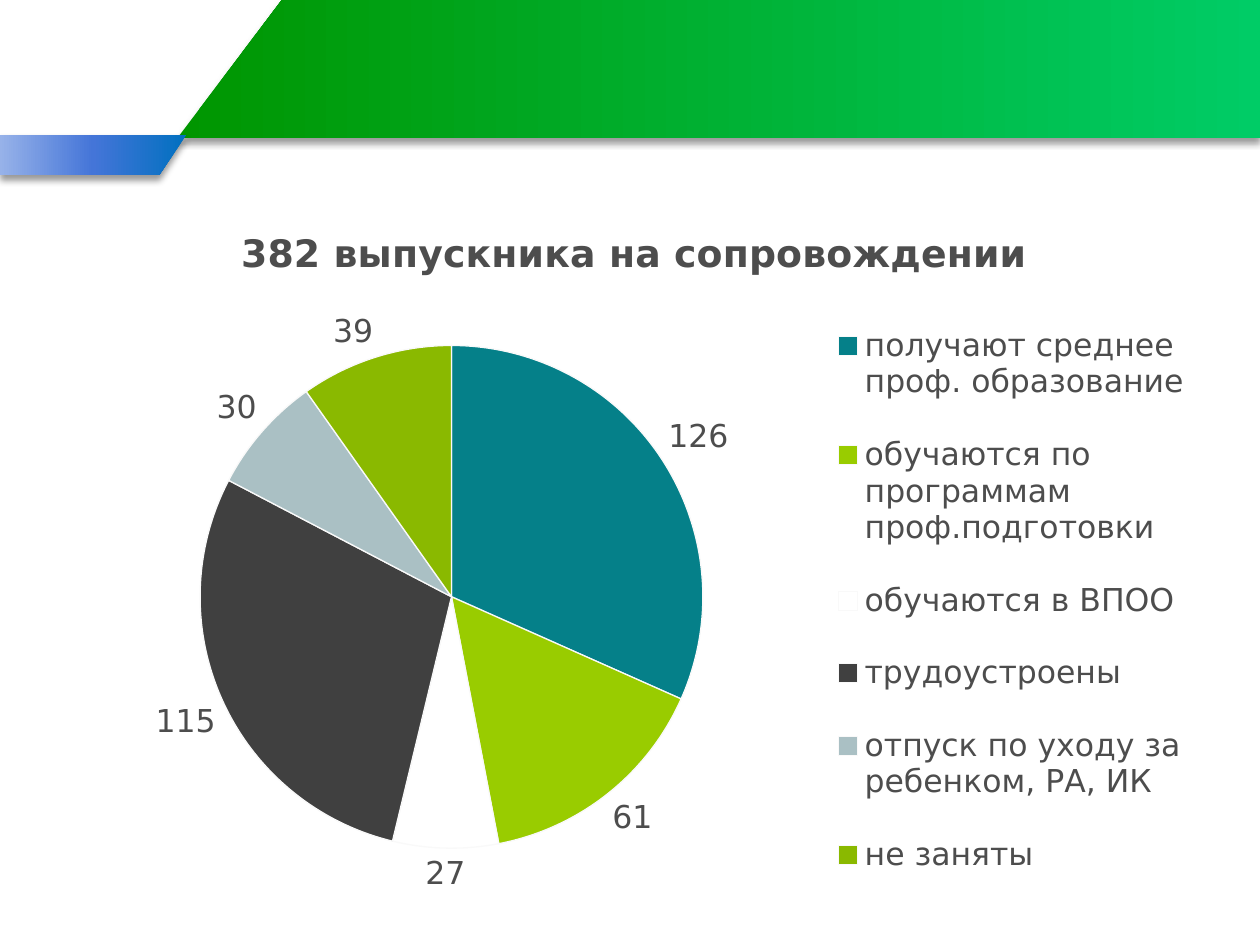
import pptx
import pptx.chart.data
import pptx.dml.color
import pptx.enum.chart
import pptx.oxml
import pptx.oxml.ns
import pptx.util

Pt = pptx.util.Pt
FONT = "DejaVu Sans"
TEXT_COLOR = "4D4D4D"
TITLE = "382 выпускника на сопровождении"
GRADUATES = [
    ("получают среднее проф. образование", 126, "058089"),
    ("обучаются по программам проф.подготовки", 61, "99CC00"),
    ("обучаются в ВПОО", 27, "FFFFFF"),
    ("трудоустроены", 115, "404040"),
    ("отпуск по уходу за ребенком, РА, ИК", 30, "AAC0C4"),
    ("не заняты", 39, "8AB900"),
]


def color(hex_code):
    return pptx.dml.color.RGBColor.from_string(hex_code)


def style_font(font, size=18, bold=False, hex_code=TEXT_COLOR):
    font.name = FONT
    font.size = Pt(size)
    font.bold = bold
    font.color.rgb = color(hex_code)


def write_text(frame, text, **font_format):
    frame.text = text
    style_font(frame.paragraphs[0].runs[0].font, **font_format)


def add_band(slide, corners, stops, angle):
    points = [(Pt(x), Pt(y)) for x, y in corners]
    builder = slide.shapes.build_freeform(*points[0], scale=1.0)
    builder.add_line_segments(points[1:], close=True)
    band = builder.convert_to_shape()
    band.line.fill.background()
    namespace = pptx.oxml.ns.nsdecls("a")
    stop_list = "".join(
        f'<a:gs pos="{position * 1000}"><a:srgbClr val="{hex_code}"/></a:gs>'
        for position, hex_code in stops
    )
    gradient = pptx.oxml.parse_xml(
        f'<a:gradFill {namespace} rotWithShape="1"><a:gsLst>{stop_list}</a:gsLst>'
        f'<a:lin ang="{angle * 60000}" scaled="0"/></a:gradFill>'
    )
    shadow = pptx.oxml.parse_xml(
        f'<a:effectLst {namespace}><a:outerShdw blurRad="{Pt(4)}" dist="{Pt(3)}" '
        'dir="5400000" algn="t" rotWithShape="0"><a:srgbClr val="000000">'
        '<a:alpha val="40000"/></a:srgbClr></a:outerShdw></a:effectLst>'
    )
    properties = band._element.spPr
    properties.find(pptx.oxml.ns.qn("a:ln")).addprevious(gradient)
    properties.append(shadow)


def manual_layout(x, y, w, h, target=""):
    modes = "".join(f'<c:{axis}Mode val="edge"/>' for axis in "xy")
    values = "".join(
        f'<c:{name} val="{value}"/>' for name, value in zip("xywh", (x, y, w, h))
    )
    return pptx.oxml.parse_xml(
        f'<c:layout {pptx.oxml.ns.nsdecls("c")}><c:manualLayout>'
        f'{target}{modes}{values}</c:manualLayout></c:layout>'
    )


def clear_layout(part):
    for old_layout in part.findall(pptx.oxml.ns.qn("c:layout")):
        part.remove(old_layout)


def place_plot(chart, *box):
    plot_area = chart._chartSpace.chart.plotArea
    clear_layout(plot_area)
    inner = '<c:layoutTarget val="inner"/>'
    plot_area.insert(0, manual_layout(*box, target=inner))


def place_legend(chart, *box):
    legend = chart.legend._element
    clear_layout(legend)
    legend.find(pptx.oxml.ns.qn("c:legendPos")).addnext(manual_layout(*box))


def add_graduates_pie(slide, left, top, width, height):
    names, counts, fills = zip(*GRADUATES)
    graduates = pptx.chart.data.CategoryChartData()
    graduates.categories = names
    graduates.add_series(TITLE, counts)
    chart = slide.shapes.add_chart(
        pptx.enum.chart.XL_CHART_TYPE.PIE,
        Pt(left), Pt(top), Pt(width), Pt(height), graduates,
    ).chart
    style_font(chart.font)
    chart.has_title = True
    write_text(chart.chart_title.text_frame, TITLE, size=21.6, bold=True)
    chart.chart_title.include_in_layout = False
    chart.has_legend = True
    chart.legend.position = pptx.enum.chart.XL_LEGEND_POSITION.RIGHT
    chart.legend.include_in_layout = False
    style_font(chart.legend.font)

    pie = chart.plots[0]
    pie.vary_by_categories = True
    pie.has_data_labels = True
    labels = pie.data_labels
    labels.show_value = True
    labels.show_percentage = False
    labels.position = pptx.enum.chart.XL_LABEL_POSITION.OUTSIDE_END
    style_font(labels.font)
    for index, hex_code in enumerate(fills):
        sector = pie.series[0].points[index].format
        sector.fill.solid()
        sector.fill.fore_color.rgb = color(hex_code)
        sector.line.color.rgb = color("F9F9F9")
        sector.line.width = Pt(0.75)
    place_plot(chart, 0.12, 0.2, 0.44, 0.72)
    place_legend(chart, 0.67, 0.13, 0.32, 0.87)


def main():
    presentation = pptx.Presentation()
    presentation.slide_width = Pt(720)
    presentation.slide_height = Pt(540)
    slide = presentation.slides.add_slide(presentation.slide_layouts[6])
    add_band(
        slide,
        [(101.5, 78.75), (720, 78.75), (720, 0), (161, 0)],
        [(0, "009600"), (100, "00CC66")], 0,
    )
    add_band(
        slide,
        [(0, 77), (106.5, 77), (91, 100), (0, 100)],
        [(0, "0070C0"), (50, "4475D8"), (100, "97B2E9")], 180,
    )
    add_graduates_pie(slide, 36, 114, 653, 405.5)
    presentation.save("out.pptx")


if __name__ == "__main__":
    main()
